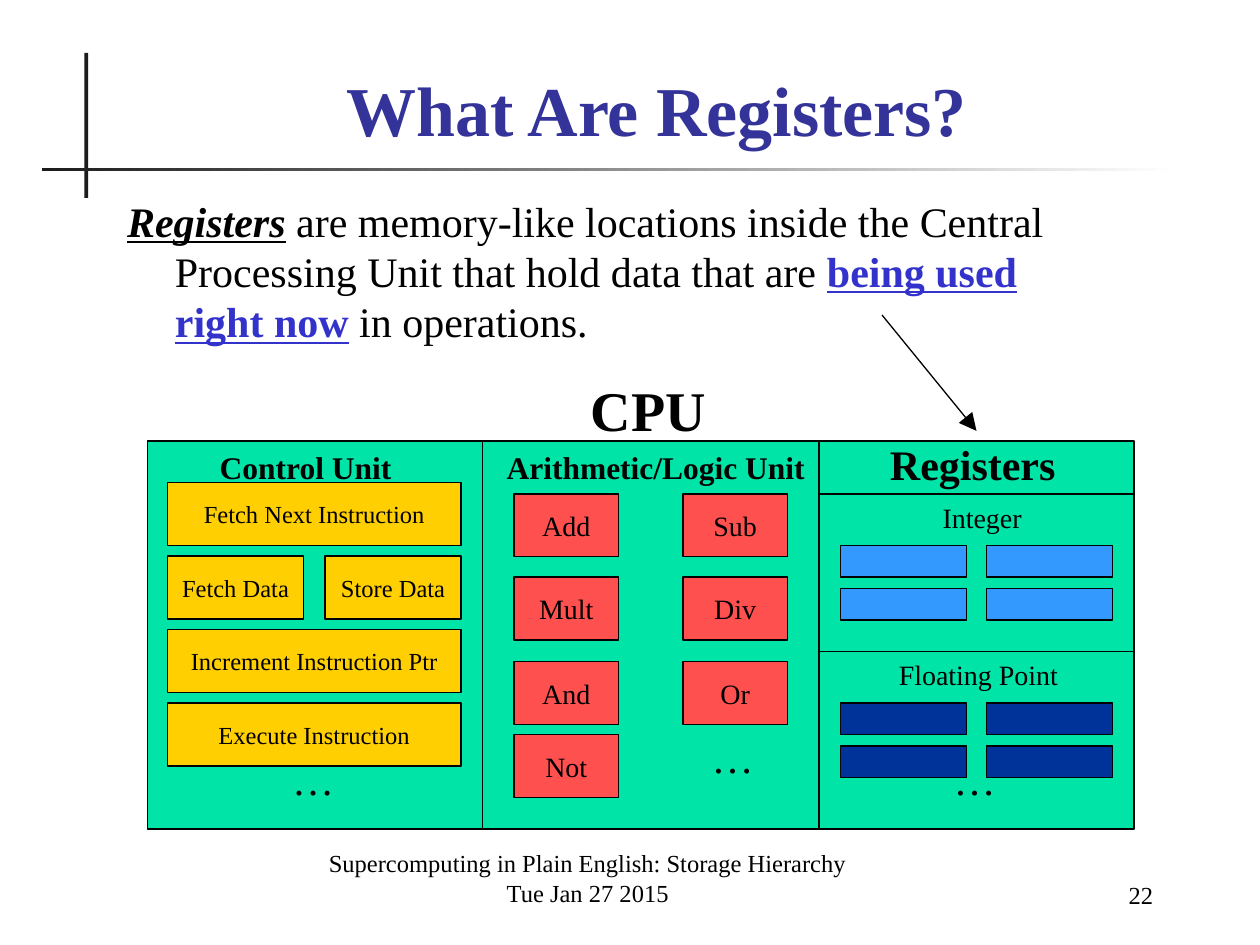
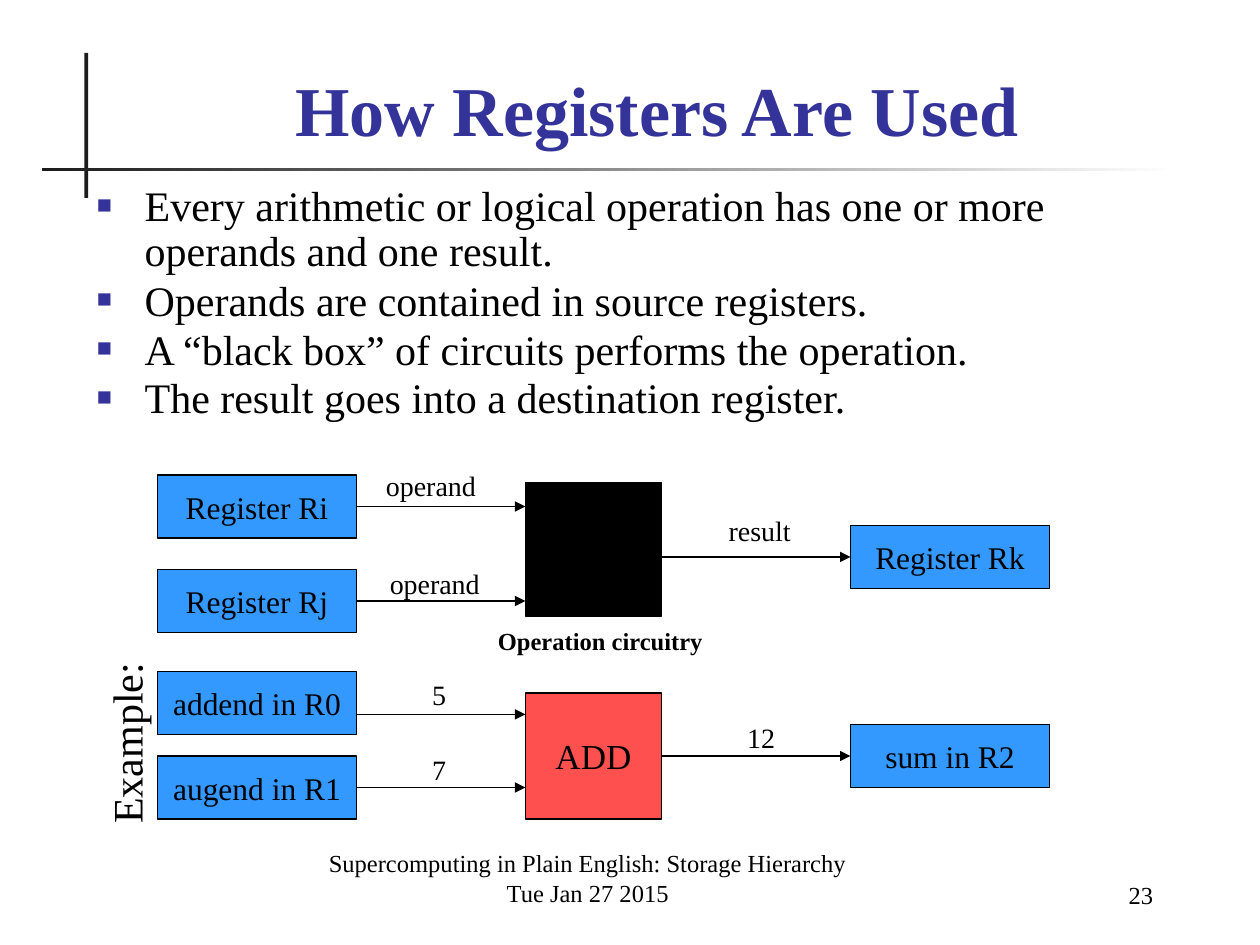
from lxml import etree
from pptx import Presentation
from pptx.dml.color import RGBColor as Rgb
from pptx.enum.shapes import MSO_CONNECTOR as Conn, MSO_SHAPE as Shape
from pptx.enum.text import MSO_ANCHOR as Anchor, PP_ALIGN as Align
from pptx.oxml.ns import qn
from pptx.util import Inches, Pt

FONT = "Times New Roman"
HEX = {
    "ink": "000000", "rule": "1C1C1C", "paper": "FFFFFF",
    "title": "333399", "key": "3333CC",
    "cpu": "00E4A8", "step": "FFCF01", "op": "FF5050",
    "int": "3399FF", "float": "003399",
}
FOOTER = ["Supercomputing in Plain English: Storage Hierarchy", "Tue Jan 27 2015"]

# Slide 22: (text, style) pairs
INTRO = [
    ("Registers", "term"),
    (" are memory-like locations inside the Central Processing Unit"
     " that hold data that are ", ""),
    ("being used right now", "key"),
    (" in operations.", ""),
]
STEPS = [
    ["Fetch Next Instruction"],
    ["Fetch Data", "Store Data"],
    ["Increment Instruction Ptr"],
    ["Execute Instruction"],
]
OPS = [(3.92, ["Add", "Sub"]), (4.58, ["Mult", "Div"]),
       (5.25, ["And", "Or"]), (5.83, ["Not"])]
# name, left, width, top, top of cells, fill
BANKS = [("Integer", 7.38, 0.83, 3.92, 4.33, "int"),
         ("Floating Point", 7.03, 1.47, 5.17, 5.58, "float")]
# text, left, top, width, height, size, bold
CPU_TAGS = [
    ("CPU", 4.49, 2.93, 1.31, 0.63, 32, True),
    ("Control Unit", 1.64, 3.51, 1.57, 0.4, 18, True),
    ("Arithmetic/Logic Unit", 3.92, 3.51, 2.57, 0.4, 18, True),
    ("Registers", 6.96, 3.43, 1.52, 0.5, 24, True),
    ("…", 2.22, 5.93, 0.53, 0.5, 24, False),
    ("…", 5.55, 5.76, 0.53, 0.5, 24, False),
    ("…", 7.47, 5.93, 0.53, 0.5, 24, False),
]

# Slide 23
POINTS = [
    "Every arithmetic or logical operation has one or more operands and one result.",
    "Operands are contained in source registers.",
    "A “black box” of circuits performs the operation.",
    "The result goes into a destination register.",
]
# inputs: (name, top, arrow height); unit: (name, top, height, fill)
FLOWS = [
    {"inputs": [("Register Ri", 3.77, 4.02), ("Register Rj", 4.52, 4.77)],
     "unit": ("", 3.83, 1.06, "ink"), "out": ("Register Rk", 4.17)},
    {"inputs": [("addend in R0", 5.33, 5.67), ("augend in R1", 6, 6.25)],
     "unit": ("ADD", 5.5, 1, "op"), "out": ("sum in R2", 5.75)},
]
FLOW_TAGS = [
    ("operand", 2.96, 3.67, 0.92, 0.37, 16, False),
    ("operand", 2.99, 4.45, 0.92, 0.37, 16, False),
    ("result", 5.68, 4.03, 0.7, 0.37, 16, False),
    ("Operation circuitry", 3.85, 4.92, 1.83, 0.33, 14, True),
    ("5", 3.33, 5.33, 0.31, 0.37, 16, False),
    ("7", 3.33, 5.92, 0.31, 0.37, 16, False),
    ("12", 5.83, 5.67, 0.42, 0.37, 16, False),
]


def color(name):
    return Rgb.from_string(HEX[name])


def style(font, size, bold=False, tint="ink"):
    font.name, font.size, font.bold = FONT, Pt(size), bold
    font.color.rgb = color(tint)


def text(slide, lines, x, y, w, h, size, bold=False, tint="ink",
         align=Align.CENTER, anchor=Anchor.TOP, wrap=True):
    box = slide.shapes.add_textbox(Inches(x), Inches(y), Inches(w), Inches(h))
    frame = box.text_frame
    frame.word_wrap, frame.vertical_anchor = wrap, anchor
    frame.text = "\n".join(lines)
    for para in frame.paragraphs:
        para.alignment = align
        for run in para.runs:
            style(run.font, size, bold, tint)
    return box


def tag(slide, word, x, y, w, h, size, bold=False):
    return text(slide, [word], x, y, w, h, size, bold, wrap=False)


def rect(slide, x, y, w, h, fill, word="", size=14):
    box = slide.shapes.add_shape(Shape.RECTANGLE, Inches(x), Inches(y),
                                 Inches(w), Inches(h))
    box.shadow.inherit = False
    box.fill.solid()
    box.fill.fore_color.rgb = color(fill)
    box.line.color.rgb = color("ink")
    box.line.width = Pt(0.75)
    if word:
        frame = box.text_frame
        frame.word_wrap, frame.vertical_anchor = False, Anchor.MIDDLE
        frame.text = word
        para = frame.paragraphs[0]
        para.alignment = Align.CENTER
        style(para.runs[0].font, size)
    return box


def line(slide, x1, y1, x2, y2, head=None):
    """Draw a line; head is the arrowhead size, "med" or "lg"."""
    link = slide.shapes.add_connector(Conn.STRAIGHT, Inches(x1), Inches(y1),
                                      Inches(x2), Inches(y2))
    link.line.color.rgb = color("ink")
    link.line.width = Pt(0.75)
    if head:
        etree.SubElement(link.line._get_or_add_ln(), qn("a:tailEnd"),
                         type="triangle", w=head, len=head)
    etree.SubElement(link._element.spPr, qn("a:effectLst"))
    return link


def hang(para):
    props = para._p.get_or_add_pPr()
    props.set("marL", str(Inches(0.38)))
    props.set("indent", str(-Inches(0.38)))
    return props


def bullet(para):
    props = hang(para)
    tint = etree.SubElement(props, qn("a:buClr"))
    etree.SubElement(tint, qn("a:srgbClr"), val=HEX["title"])
    etree.SubElement(props, qn("a:buSzPct"), val="60000")
    etree.SubElement(props, qn("a:buFont"), typeface=FONT)
    etree.SubElement(props, qn("a:buChar"), char="■")


def base(deck, title, number):
    """Add a slide with the crossed rules, title and footer."""
    slide = deck.slides.add_slide(deck.slide_layouts[6])
    post = rect(slide, 0.67, 0.42, 0.03, 1.15, "rule")
    beam = rect(slide, 0.33, 1.33, 9, 0.03, "rule")
    beam.fill.gradient()
    beam.fill.gradient_angle = 0
    for stop, tint, spot in zip(beam.fill.gradient_stops, ("rule", "paper"), (0, 1)):
        stop.color.rgb = color(tint)
        stop.position = spot
    for bar in (post, beam):
        bar.line.fill.background()
    text(slide, FOOTER, 1.75, 6.75, 5.83, 0.5, 14, anchor=Anchor.BOTTOM)
    text(slide, [str(number)], 7.83, 6.77, 1.42, 0.5, 14,
         align=Align.RIGHT, anchor=Anchor.BOTTOM)
    text(slide, [title], 0.83, 0.5, 8.77, 0.74, 40, True, "title",
         anchor=Anchor.BOTTOM)
    return slide


def draw_cpu(deck):
    slide = base(deck, "What Are Registers?", 22)
    body = text(slide, [], 0.91, 1.5, 8.02, 2, 24, align=Align.LEFT)
    para = body.text_frame.paragraphs[0]
    hang(para)
    for words, kind in INTRO:
        run = para.add_run()
        run.text = words
        style(run.font, 24, bool(kind), "key" if kind == "key" else "ink")
        run.font.underline = bool(kind)
        run.font.italic = kind == "term"

    left, top, right, foot = 1.17, 3.5, 9, 6.58
    rect(slide, left, top, right - left, foot - top, "cpu")
    for x in (3.83, 6.5):
        line(slide, x, top, x, foot)

    gap, full, pitch = 0.17, 2.33, 1.75 / 3
    for row, names in enumerate(STEPS):
        wide = (full - gap * (len(names) - 1)) / len(names)
        for col, name in enumerate(names):
            rect(slide, 1.33 + col * (wide + gap), 3.83 + row * pitch,
                 wide, 0.5, "step", name)
    for y, names in OPS:
        for col, name in enumerate(names):
            rect(slide, 4.08 + col * 1.34, y, 0.83, 0.5, "op", name, 16)
    for name, x, wide, y, cells, fill in BANKS:
        line(slide, 6.5, y, right, y)
        tag(slide, name, x, y, wide, 0.37, 16)
        for i in range(4):
            row, col = divmod(i, 2)
            rect(slide, 6.67 + col * 1.16, cells + row * 0.34, 1, 0.25, fill)
    for item in CPU_TAGS:
        tag(slide, *item)
    line(slide, 7, 2.5, 7.75, 3.42, "lg")


def draw_flow(deck):
    slide = base(deck, "How Registers Are Used", 23)
    body = text(slide, POINTS, 0.67, 1.42, 8.5, 2.42, 24, align=Align.LEFT)
    for i, para in enumerate(body.text_frame.paragraphs):
        para.line_spacing = 0.8 if i else 0.9
        para.space_before = Pt(4.8 if i else 0)
        bullet(para)

    wide, tall = 1.58, 0.5
    for flow in FLOWS:
        name, top, high, fill = flow["unit"]
        unit = rect(slide, 4.17, top, 1.08, high, fill, name, 20)
        for name, y, mid in flow["inputs"]:
            box = rect(slide, 1.25, y, wide, tall, "int", name, 18)
            link = line(slide, 2.83, mid, 4.17, mid, "med")
            if abs(y + tall / 2 - mid) < 0.01:
                link.begin_connect(box, 3)
        name, y = flow["out"]
        box = rect(slide, 6.75, y, wide, tall, "int", name, 18)
        mid = y + tall / 2
        link = line(slide, 5.25, mid, 6.75, mid, "med")
        link.end_connect(box, 1)
        if abs(top + high / 2 - mid) < 0.01:
            link.begin_connect(unit, 3)
    for item in FLOW_TAGS:
        tag(slide, *item)
    side = tag(slide, "Example:", 0.26, 5.65, 1.48, 0.5, 24)
    side.rotation = 270


def main():
    deck = Presentation()
    deck.slide_width, deck.slide_height = Inches(10), Inches(7.5)
    draw_cpu(deck)
    draw_flow(deck)
    deck.save("out.pptx")


if __name__ == "__main__":
    main()
